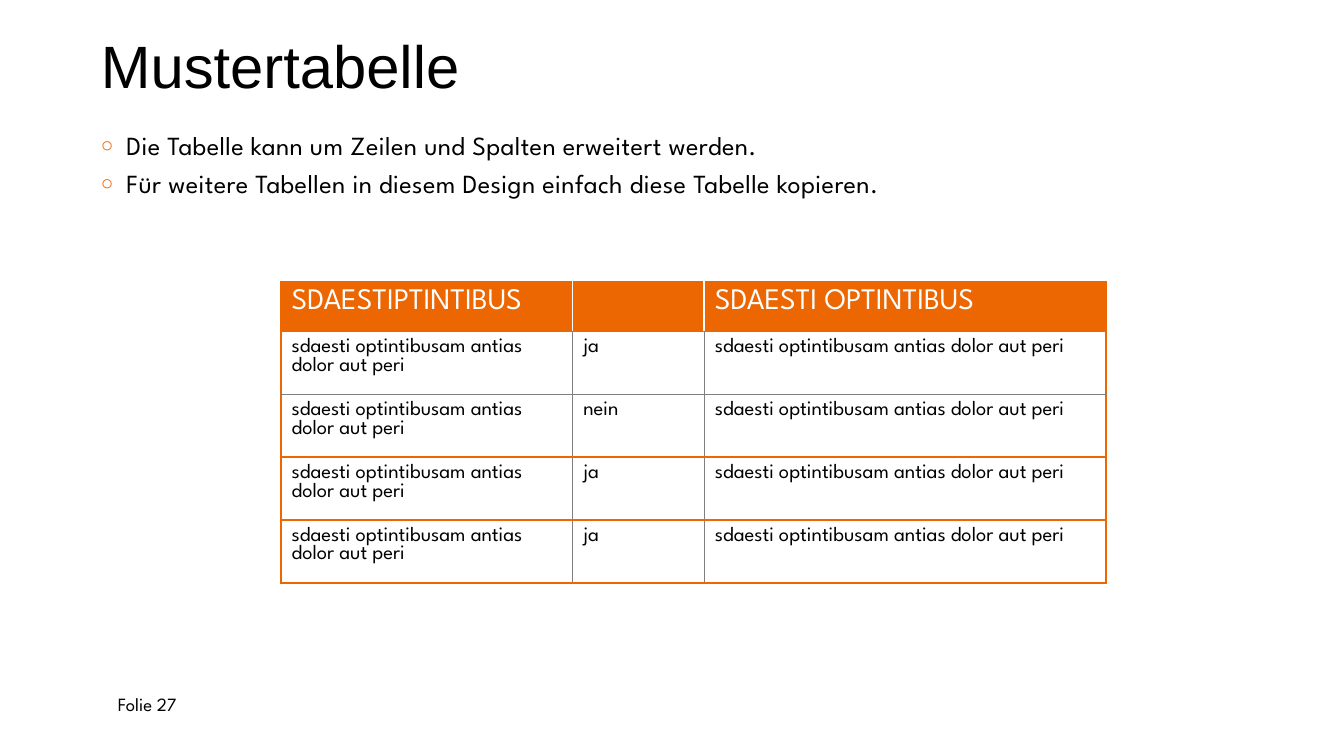
from lxml import etree
from pptx import Presentation
from pptx import util as u
from pptx.dml.color import RGBColor
from pptx.enum import text
from pptx.oxml.ns import qn

ORANGE = RGBColor(0xEC, 0x66, 0x02)
WHITE = RGBColor(0xFF, 0xFF, 0xFF)
BLACK = RGBColor(0x00, 0x00, 0x00)
GREY = RGBColor(0x80, 0x80, 0x80)
BODY_FONT = "League Spartan"
TITLE_FONT = "Arial"

BULLETS = [
    "Die Tabelle kann um Zeilen und Spalten erweitert werden.",
    "Für weitere Tabellen in diesem Design einfach diese Tabelle kopieren.",
]
FILLER = "sdaesti optintibusam antias dolor aut peri"
HEADER = ["SDAESTIPTINTIBUS", "", "SDAESTI OPTINTIBUS"]
ROWS = [HEADER] + [[FILLER, answer, FILLER] for answer in ("ja", "nein", "ja", "ja")]
COLUMN_WIDTHS = [2.17, 0.98, 2.99]
HEADER_HEIGHT, ROW_HEIGHT, TABLE_HEIGHT = 0.21, 0.26, 2.25


def add_element(parent, tag, **attributes):
    return etree.SubElement(parent, qn(tag), attributes)


def add_color(parent, color):
    add_element(add_element(parent, "a:solidFill"), "a:srgbClr", val=str(color))


def write(para, words, size=14, font=BODY_FONT, color=BLACK, line_spacing=None, tracking=None):
    """Add one formatted run; an empty text only sets the paragraph's size."""
    if line_spacing:
        para.line_spacing = line_spacing
    if not words:
        properties = add_element(para._p, "a:endParaRPr", sz=str(size * 100))
        add_element(properties, "a:latin", typeface=font)
        return
    span = para.add_run()
    span.text = words
    span.font.size = u.Pt(size)
    span.font.name = font
    span.font.color.rgb = color
    if tracking:
        span.font._element.set("spc", str(round(tracking * 100)))


def set_bullet(para, indent):
    properties = para._p.get_or_add_pPr()
    properties.set("marL", str(u.Inches(indent)))
    properties.set("indent", str(-u.Inches(indent)))
    color = add_element(properties, "a:buClr")
    add_element(color, "a:srgbClr", val=str(ORANGE))
    add_element(properties, "a:buSzPct", val="80000")
    add_element(properties, "a:buFont", typeface=TITLE_FONT)
    add_element(properties, "a:buChar", char="○")


def set_borders(cell, row, column):
    """Orange frame and row rules, white header dividers, thin grey body dividers."""
    last_column = len(COLUMN_WIDTHS) - 1
    divider = (WHITE, 1) if row == 0 else (GREY, 0.5)
    frame = (ORANGE, 1)
    sides = {
        "L": frame if column == 0 else divider,
        "R": frame if column == last_column else divider,
        "T": divider if row == 2 else frame,
        "B": divider if row == 1 else frame,
    }
    properties = cell._tc.get_or_add_tcPr()
    for index, (side, (color, width)) in enumerate(sides.items()):
        line = etree.Element(qn(f"a:ln{side}"), w=str(u.Pt(width)))
        add_color(line, color)
        properties.insert(index, line)


class Page:
    def __init__(self, deck):
        self.slide = deck.slides.add_slide(deck.slide_layouts[6])

    def box(self, left, top, width, height, inset=0, wrap=True, anchor=text.MSO_ANCHOR.TOP):
        shape = self.slide.shapes.add_textbox(*map(u.Inches, (left, top, width, height)))
        frame = shape.text_frame
        frame.word_wrap = wrap
        frame.vertical_anchor = anchor
        frame.margin_left = frame.margin_right = u.Inches(inset)
        frame.margin_top = frame.margin_bottom = u.Inches(inset / 2)
        return frame

    def title(self, words):
        frame = self.box(0.75, 0.3, 8.82, 0.45, anchor=text.MSO_ANCHOR.BOTTOM)
        write(frame.paragraphs[0], words, size=32, font=TITLE_FONT, line_spacing=0.85)

    def bullets(self, lines):
        frame = self.box(0.75, 0.92, 8.58, 0.63)
        for index, words in enumerate(lines):
            para = frame.add_paragraph() if index else frame.paragraphs[0]
            set_bullet(para, 0.19)
            write(para, words, line_spacing=1.2, tracking=0.2)

    def footer(self, words):
        frame = self.box(0.78, 5.11, 0.83, 0.27, inset=0.1, wrap=False)
        write(frame.paragraphs[0], words, size=10)

    def table(self, rows, left, top):
        heights = [HEADER_HEIGHT] + [ROW_HEIGHT] * (len(rows) - 1)
        size = (sum(COLUMN_WIDTHS), TABLE_HEIGHT)
        holder = self.slide.shapes.add_table(
            len(rows), len(COLUMN_WIDTHS), *map(u.Inches, (left, top, *size))
        )
        table = holder.table
        for column, width in zip(table.columns, COLUMN_WIDTHS):
            column.width = u.Inches(width)
        for row, height in zip(table.rows, heights):
            row.height = u.Inches(height)
        holder.height = u.Inches(TABLE_HEIGHT)
        for r, row in enumerate(rows):
            for c, words in enumerate(row):
                self.cell(table.cell(r, c), words, r, c)

    def cell(self, cell, words, row, column):
        is_header = row == 0
        cell.margin_left = cell.margin_right = u.Inches(0.08)
        cell.margin_top = cell.margin_bottom = u.Inches(0.05)
        if is_header:
            cell.fill.solid()
            cell.fill.fore_color.rgb = ORANGE
        else:
            cell.fill.background()
        set_borders(cell, row, column)
        write(cell.text_frame.paragraphs[0], words, size=16 if is_header else 11,
              color=WHITE if is_header else BLACK)


def main():
    deck = Presentation()
    deck.slide_width = u.Inches(10)
    deck.slide_height = deck.slide_width * 9 // 16
    page = Page(deck)
    page.footer("Folie 27")
    page.title("Mustertabelle")
    page.bullets(BULLETS)
    page.table(ROWS, left=2.09, top=2.1)
    deck.save("out.pptx")


if __name__ == "__main__":
    main()
